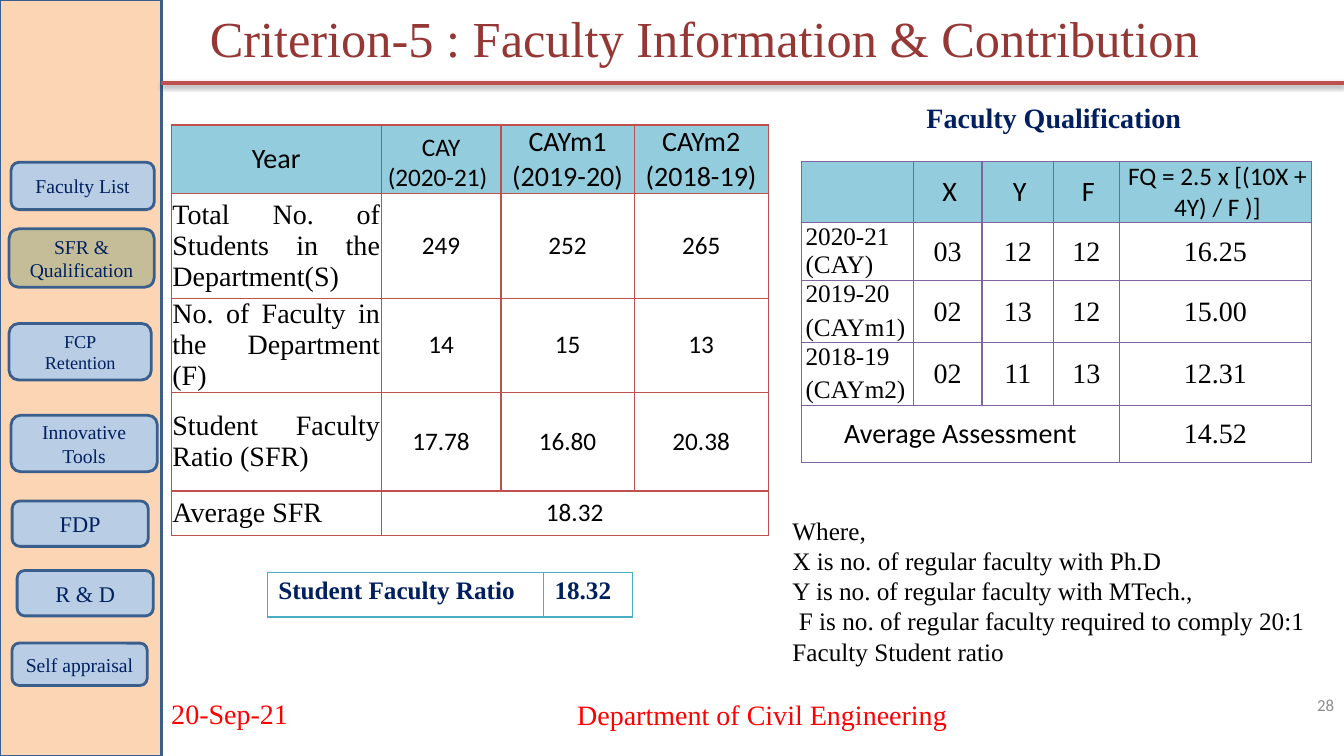
import pptx
import pptx.dml.color
import pptx.enum.shapes
import pptx.enum.text
import pptx.oxml.xmlchemy
import pptx.util
from lxml import etree
from pptx.util import Inches

ALIGN = pptx.enum.text.PP_ALIGN
ANCHOR = pptx.enum.text.MSO_ANCHOR
SHAPE = pptx.enum.shapes.MSO_SHAPE
SERIF, SANS = "Times New Roman", "Calibri"
NAVY, BLACK, RED, EDGE, HEADER = "002060", "000000", "FF0000", "3A5F8C", "93CDDD"


def rgb(value):
    """Turn a hex string into a colour."""
    return pptx.dml.color.RGBColor.from_string(value)


def child(parent, tag, **attrs):
    """Append a DrawingML element to a parent."""
    ns = "{http://schemas.openxmlformats.org/drawingml/2006/main}"
    return etree.SubElement(parent, ns + tag, attrs)


def write(tf, text, size, color=BLACK, name=SERIF, bold=False, plain=False, **fmt):
    """Fill a text frame, one paragraph a line, with font and paragraph formats."""
    font = {"size": pptx.util.Pt(size), "name": name, "bold": bold}
    tf.word_wrap = True
    gap = fmt.pop("gap", 0)
    for i, line in enumerate(text.split("\n")):
        p = tf.paragraphs[0] if i == 0 else tf.add_paragraph()
        if plain:
            pPr = p._p.get_or_add_pPr()
            pPr.set("marL", "0")
            pPr.set("indent", "0")
            child(pPr, "buNone")
        for key, value in fmt.items():
            setattr(p, key, value)
        p.space_before = pptx.util.Pt(gap if i else 0)
        r = p.add_run()
        r.text = line
        for key, value in font.items():
            setattr(r.font, key, value)
        r.font.color.rgb = rgb(color)


def place(s, box):
    """Move a shape to left, top, width, height in inches."""
    for key, value in zip(("left", "top", "width", "height"), box):
        setattr(s, key, Inches(value))


def add_text(shapes, box, text, size, anchor=ANCHOR.MIDDLE, **fmt):
    """Add a text box."""
    s = shapes.add_textbox(*map(Inches, box))
    s.text_frame.vertical_anchor = anchor
    write(s.text_frame, text, size, **fmt)


def add_panel(shapes, kind, box, fill):
    """Add a filled and outlined preset shape."""
    s = shapes.add_shape(kind, *map(Inches, box))
    s.shadow.inherit = False
    s.fill.solid()
    s.fill.fore_color.rgb = rgb(fill)
    s.line.color.rgb = rgb(EDGE)
    s.line.width = pptx.util.Pt(2)
    return s


def add_button(shapes, box, text, size=14, fill="B9CDE5"):
    """Add a navigation button."""
    s = add_panel(shapes, SHAPE.FLOWCHART_ALTERNATE_PROCESS, box, fill)
    s.text_frame.vertical_anchor = ANCHOR.MIDDLE
    write(s.text_frame, text, size, color=NAVY, alignment=ALIGN.CENTER)


def add_rule(shapes, left, right, y):
    """Add the shadowed line under the title."""
    s = shapes.add_connector(
        pptx.enum.shapes.MSO_CONNECTOR.STRAIGHT,
        Inches(left), Inches(y), Inches(right), Inches(y))
    s.line.color.rgb = rgb("C0504D")
    s.line.width = pptx.util.Pt(3)
    effects = child(s._element.spPr, "effectLst")
    shadow = child(effects, "outerShdw", blurRad="39370", dist="20320", dir="5400000")
    child(child(shadow, "srgbClr", val=BLACK), "alpha", val="38000")


def border(cell, color, bottom=1):
    """Draw the four borders of a cell."""
    tcPr = cell._tc.get_or_add_tcPr()
    for side in "LRTB":
        width = pptx.util.Pt(bottom if side == "B" else 1)
        ln = child(tcPr, "ln" + side, w=str(width))
        child(child(ln, "solidFill"), "srgbClr", val=color)


def add_grid(shapes, left, top, widths, heights, rows, style, line, inset=0.0, bottom=1):
    """Add a table whose cell formats come from style(row, column)."""
    table = shapes.add_table(
        len(rows), len(widths), Inches(left), Inches(top),
        Inches(sum(widths)), Inches(sum(heights))).table
    table.first_row = table.horz_banding = False
    for column, width in zip(table.columns, widths):
        column.width = Inches(width)
    for row, height in zip(table.rows, heights):
        row.height = Inches(height)
    for i, row in enumerate(rows):
        for j, text in enumerate(row):
            cell = table.cell(i, j)
            border(cell, line, bottom)
            fmt = dict(style(i, j))
            fill = fmt.pop("fill", None)
            if fill:
                cell.fill.solid()
                cell.fill.fore_color.rgb = rgb(fill)
            else:
                cell.fill.background()
            cell.vertical_anchor = fmt.pop("anchor", ANCHOR.MIDDLE)
            cell.margin_left = Inches(fmt.pop("left", inset))
            cell.margin_right = Inches(inset)
            cell.margin_top = cell.margin_bottom = 0
            if text:
                write(cell.text_frame, text, **fmt)
    return table


def ratio_style(i, j):
    """Give the cell formats of the student ratio table."""
    if i == 0:
        return {"size": 18 if j == 1 else 20, "name": SANS, "fill": HEADER,
                "alignment": ALIGN.CENTER, "anchor": ANCHOR.BOTTOM if j else ANCHOR.MIDDLE}
    if j == 0:
        return {"size": 20, "alignment": ALIGN.JUSTIFY}
    return {"size": 18, "name": SANS, "alignment": ALIGN.CENTER}


def qualification_style(i, j):
    """Give the cell formats of the faculty qualification table."""
    if i == 0:
        return {"size": 18 if j == 4 else 20, "name": SANS, "fill": HEADER,
                "alignment": ALIGN.CENTER, "left": 0.04}
    if i == 4 and j == 0:
        return {"size": 20, "name": SANS, "alignment": ALIGN.CENTER}
    if j == 0:
        return {"size": 18, "anchor": ANCHOR.TOP, "left": 0.04, "gap": 4.2}
    return {"size": 20, "alignment": ALIGN.CENTER}


def summary_style(i, j):
    """Give the cell formats of the summary strip."""
    return {"size": 18, "color": "001F5F", "bold": True, "left": 0.11,
            "line_spacing": pptx.util.Pt(14.2)}


def main():
    """Build the slide."""
    prs = pptx.Presentation()
    prs.slide_width, prs.slide_height = Inches(13.33), Inches(7.5)
    slide = prs.slides.add_slide(prs.slide_layouts[1])
    shapes = slide.shapes
    title, body = slide.placeholders

    add_panel(shapes, SHAPE.RECTANGLE, (0, 0, 1.6, 7.5), "FCD5B5")
    add_rule(shapes, 1.6, 13.33, 0.82)
    place(title, (1.88, 0.02, 10.22, 0.71))
    write(title.text_frame, "Criterion-5 : Faculty Information & Contribution", 36,
          color="953735", alignment=ALIGN.CENTER)
    place(body, (7.76, 5.05, 5.28, 1.62))
    write(body.text_frame, "Where,\nX is no. of regular faculty with Ph.D\n"
          "Y is no. of regular faculty with MTech.,\n"
          " F is no. of regular faculty required to comply 20:1 Faculty Student ratio",
          18, plain=True, alignment=ALIGN.JUSTIFY)
    for s in (title, body):
        s.text_frame.auto_size = pptx.enum.text.MSO_AUTO_SIZE.NONE
        s.text_frame.vertical_anchor = ANCHOR.MIDDLE

    ratio = add_grid(shapes, 1.7, 1.24, (2.08, 1.19, 1.32, 1.33), (0.68, 1.04, 0.93, 0.98, 0.44), [
        ("Year", "CAY\n (2020-21)", "CAYm1\n(2019-20)", "CAYm2\n(2018-19)"),
        ("Total No. of Students in the Department(S)", "249", "252", "265"),
        ("No. of Faculty in the Department (F)", "14", "15", "13"),
        ("Student Faculty Ratio (SFR)", "17.78", "16.80", "20.38"),
        ("Average SFR", "18.32", "", "")], ratio_style, "C0504D", 0.01)
    ratio.cell(0, 1).text_frame.paragraphs[1].alignment = ALIGN.LEFT
    ratio.cell(4, 1).merge(ratio.cell(4, 3))
    add_grid(shapes, 2.65, 5.68, (2.74, 0.88), (0.44,),
             [("Student Faculty Ratio", "18.32")], summary_style, "4BACC6", 0.06, 2)
    quality = add_grid(shapes, 7.95, 1.6, (1.11, 0.68, 0.71, 0.65, 1.91), (0.6, 0.57, 0.62, 0.62, 0.57), [
        ("", "X", "Y", "F", "FQ = 2.5 x [(10X + 4Y) / F )]"),
        ("2020-21 (CAY)", "03", "12", "12", "16.25"),
        ("2019-20\n(CAYm1)", "02", "13", "12", "15.00"),
        ("2018-19\n(CAYm2)", "02", "11", "13", "12.31"),
        ("Average Assessment", "", "", "", "14.52")], qualification_style, "8064A2")
    quality.cell(4, 0).merge(quality.cell(4, 3))
    add_text(shapes, (9.09, 1.08, 3.59, 0.31), "Faculty Qualification", 20, ANCHOR.TOP,
             color="001F5F", bold=True, line_spacing=pptx.util.Pt(14.2))

    add_button(shapes, (0.11, 1.61, 1.42, 0.47), "Faculty List")
    add_button(shapes, (0.09, 2.27, 1.44, 0.58), "SFR & Qualification", fill="C4BD97")
    add_button(shapes, (0.09, 3.21, 1.41, 0.56), "FCP\nRetention", 13)
    add_button(shapes, (0.11, 4.12, 1.45, 0.56), "Innovative Tools")
    add_button(shapes, (0.12, 4.97, 1.35, 0.45), "FDP", 16)
    add_button(shapes, (0.17, 5.66, 1.35, 0.45), "R & D", 16)
    add_button(shapes, (0.12, 6.38, 1.34, 0.42), "Self appraisal")

    add_text(shapes, (1.6, 6.9, 3.11, 0.35), "20-Sep-21", 20, color=RED)
    add_text(shapes, (4.78, 6.89, 5.56, 0.4), "Department of Civil Engineering", 20,
             color=RED, alignment=ALIGN.CENTER)
    add_text(shapes, (12.44, 6.79, 0.89, 0.4), "28", 12, color="8C8C8C", name=SANS,
             alignment=ALIGN.RIGHT)
    prs.save("out.pptx")


if __name__ == "__main__":
    main()
